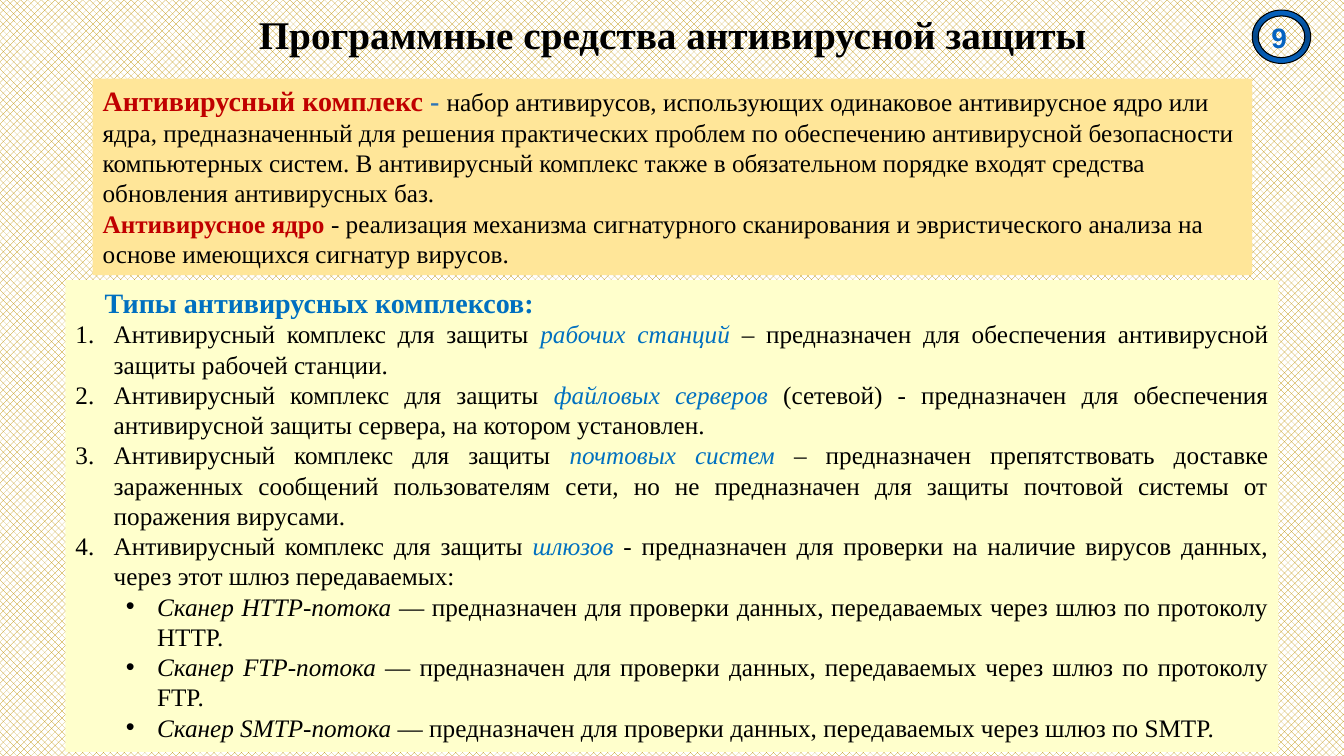
from copy import deepcopy

from lxml.etree import SubElement
from pptx import Presentation
from pptx.dml.color import RGBColor
from pptx.enum.dml import MSO_PATTERN
from pptx.enum.shapes import MSO_SHAPE
from pptx.enum.text import MSO_ANCHOR, MSO_AUTO_SIZE, PP_ALIGN
from pptx.oxml.ns import qn
from pptx.util import Inches, Pt

BLACK = RGBColor(0, 0, 0)
WHITE = RGBColor(255, 255, 255)
GOLD = RGBColor(0xBF, 0x90, 0x00)
SAND = RGBColor(0xFF, 0xE6, 0x99)
CREAM = RGBColor(0xFF, 0xFF, 0xCC)
RED = RGBColor(0xC0, 0, 0)
STEEL = RGBColor(0x2E, 0x75, 0xB6)
BLUE = RGBColor(0, 0x70, 0xC0)
ROYAL = RGBColor(0x05, 0x63, 0xC1)
NAVY = RGBColor(0x04, 0x47, 0x8A)
SERIF = "Times New Roman"

HEAD = "Программные средства антивирусной защиты"
CORE = ("набор антивирусов, использующих одинаковое антивирусное ядро или ядра, "
        "предназначенный для решения практических проблем по обеспечению "
        "антивирусной безопасности компьютерных систем. В антивирусный комплекс "
        "также в обязательном порядке входят средства обновления антивирусных баз.")
ENGINE = ("- реализация механизма сигнатурного сканирования и эвристического "
          "анализа на основе имеющихся сигнатур вирусов.")
TYPES = [
    ("рабочих станций ", "– предназначен для обеспечения антивирусной защиты "
     "рабочей станции."),
    ("файловых серверов ", "(сетевой) - предназначен для обеспечения антивирусной "
     "защиты сервера, на котором установлен."),
    ("почтовых систем ", "– предназначен препятствовать доставке зараженных "
     "сообщений пользователям сети, но не предназначен для защиты почтовой "
     "системы от поражения вирусами."),
    ("шлюзов ", "- предназначен для проверки на наличие вирусов данных, через "
     "этот шлюз передаваемых:"),
]
SCANS = [("HTTP", "протоколу HTTP."), ("FTP", "протоколу FTP."), ("SMTP", "SMTP.")]


def add_run(para, text, color=BLACK, size=18, bold=False, italic=False, name=SERIF):
    run = para.add_run()
    run.text = text
    font = run.font
    font.name, font.size, font.bold, font.italic = name, Pt(size), bold, italic
    font.color.rgb = color


def add_para(frame, align=PP_ALIGN.LEFT):
    """Return the first paragraph while it is empty, else a new one."""
    first = frame.paragraphs[0]
    para = frame.add_paragraph() if first.runs else first
    para.alignment = align
    return para


def indent(para, left, first, mark=None, **attrs):
    """Set indents and, when mark is given, a bullet element with its attributes."""
    props = para._p.get_or_add_pPr()
    props.set("marL", str(Inches(left)))
    props.set("indent", str(Inches(first)))
    if mark:
        SubElement(props, qn("a:buFont"), typeface="Arial" if mark == "a:buChar" else "+mj-lt")
        SubElement(props, qn(mark), **attrs)


def add_panel(slide, box, color):
    panel = slide.shapes.add_shape(MSO_SHAPE.RECTANGLE, *map(Inches, box))
    panel.shadow.inherit = False
    panel.fill.solid()
    panel.fill.fore_color.rgb = color
    panel.line.fill.background()
    frame = panel.text_frame
    frame.word_wrap = True
    frame.vertical_anchor = MSO_ANCHOR.TOP
    return frame


def add_title(slide, box):
    title = slide.shapes.title
    title.left, title.top, title.width, title.height = map(Inches, box)
    frame = title.text_frame
    frame.auto_size = MSO_AUTO_SIZE.NONE
    frame.vertical_anchor = MSO_ANCHOR.MIDDLE
    para = add_para(frame, PP_ALIGN.CENTER)
    para.line_spacing = 0.9
    add_run(para, HEAD, size=28, bold=True)


def add_terms(slide, box):
    frame = add_panel(slide, box, SAND)
    para = add_para(frame)
    add_run(para, "Антивирусный комплекс ", RED, 20, True)
    add_run(para, "- ", STEEL, 20, True)
    add_run(para, CORE)
    para = add_para(frame)
    add_run(para, "Антивирусное ядро ", RED, bold=True)
    add_run(para, ENGINE)


def add_types(slide, box):
    frame = add_panel(slide, box, CREAM)
    para = add_para(frame, PP_ALIGN.JUSTIFY)
    indent(para, 0, 0.29)
    add_run(para, "Типы антивирусных комплексов:", BLUE, 20, True)
    for target, text in TYPES:
        para = add_para(frame, PP_ALIGN.JUSTIFY)
        indent(para, 0.38, -0.38, "a:buAutoNum", type="arabicPeriod")
        add_run(para, "Антивирусный комплекс для защиты ")
        add_run(para, target, BLUE, italic=True)
        add_run(para, text)
    for flow, end in SCANS:
        para = add_para(frame, PP_ALIGN.JUSTIFY)
        para.level = 1
        indent(para, 0.81, -0.31, "a:buChar", char="•")
        add_run(para, f"Сканер {flow}-потока ", italic=True)
        add_run(para, "— предназначен для проверки данных, передаваемых через "
                f"шлюз по {end}")


def add_badge(slide, box):
    """Draw the ring with the slide number inside it."""
    left, top, width, height = box
    ring = slide.shapes.add_shape(MSO_SHAPE.DONUT, *map(Inches, box))
    ring.shadow.inherit = False
    ring.adjustments[0] = 0.11
    ring.line.color.rgb = BLACK
    ring.line.width = Pt(0.75)
    fill = ring.fill
    fill.gradient()
    fill.gradient_angle = 90
    last = fill.gradient_stops[1]._gs
    last.addprevious(deepcopy(last))
    for stop, place, color in zip(fill.gradient_stops, (0, 0.5, 1), (ROYAL, NAVY, ROYAL)):
        stop.position = place
        stop.color.rgb = color
    label = slide.shapes.add_textbox(
        Inches(left + 0.19), Inches(top + 0.1), Inches(width - 0.2), Inches(0.34))
    frame = label.text_frame
    frame.margin_left = frame.margin_right = frame.margin_top = frame.margin_bottom = 0
    frame.word_wrap = True
    add_run(add_para(frame), "9", ROYAL, 20, True, name="Arial")


def main():
    deck = Presentation()
    deck.slide_width, deck.slide_height = Inches(13.33), Inches(7.5)
    slide = deck.slides.add_slide(deck.slide_layouts[5])
    back = slide.background.fill
    back.patterned()
    back.pattern = MSO_PATTERN.PERCENT_50
    back.fore_color.rgb, back.back_color.rgb = GOLD, WHITE
    add_terms(slide, (0.92, 0.78, 11.5, 1.95))
    add_title(slide, (0.92, 0.08, 11.5, 0.57))
    add_badge(slide, (12.42, 0.1, 0.58, 0.53))
    add_types(slide, (0.65, 2.78, 12.03, 4.68))
    deck.save("out.pptx")


if __name__ == "__main__":
    main()
